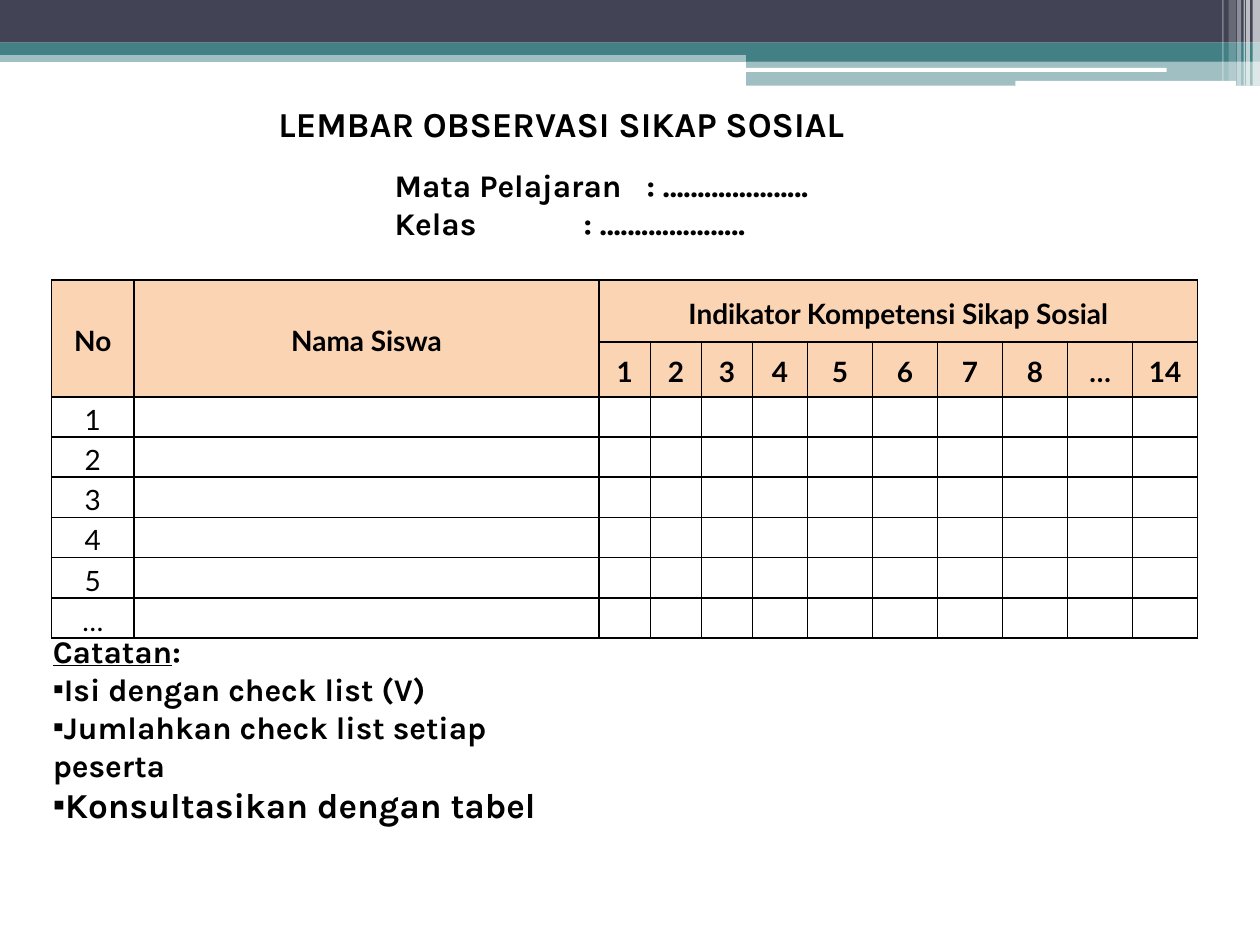
from lxml import etree
from pptx import Presentation
from pptx import util as u
from pptx.dml.color import RGBColor
from pptx.enum import shapes, text
from pptx.oxml.ns import qn

COLORS = {"navy": "424456", "teal": "438086", "white": "FFFFFF",
          "black": "000000", "peach": "FBD4B4"}

# left, top, width, height (cm), colour, opacity %, rounded
BANDS = [
    (0, 1.02, 25.4, 0.23, "teal", 50, False),
    (0, 0, 25.4, 0.86, "navy", 100, False),
    (0, 0.86, 25.4, 0.25, "teal", 100, False),
    (15.04, 0.99, 10.36, 0.25, "teal", 100, False),
    (15.04, 1.22, 10.36, 0.51, "teal", 50, False),
    (15.01, 1.37, 8.51, 0.08, "white", 100, True),
    (20.47, 1.63, 4.45, 0.1, "white", 100, True),
]
# left, width, height (cm), opacity %
STRIPES = [(25.25, 0.15, 1.73, 65), (25.12, 0.08, 1.73, 65),
           (25.07, 0.03, 1.73, 60), (24.94, 0.08, 1.73, 40),
           (24.77, 0.15, 1.63, 20), (24.64, 0.03, 1.63, 30)]

HEADING = "LEMBAR OBSERVASI SIKAP SOSIAL"
FIELDS = ["Mata Pelajaran\t: …………………", "Kelas\t\t: …………………"]
FIELD_INDENT, FIELD_TABS = 2.54, (5.08, 7.62)

HEADERS = ["No", "Nama Siswa", "Indikator Kompetensi Sikap Sosial"]
INDICATORS = ["1", "2", "3", "4", "5", "6", "7", "8", "…", "14"]
STUDENTS = ["1", "2", "3", "4", "5", "…"]
COL_WIDTHS = [1.66, 9.38] + [1.03] * 3 + [1.11] + [1.31] * 6
ROW_HEIGHTS = [1.25, 1.11] + [0.81] * len(STUDENTS)

NOTES_TITLE = ("Catatan", ":")
NOTES = [("Isi dengan check list (V)", 18),
         ("Jumlahkan check list setiap peserta", 18),
         ("Konsultasikan dengan tabel", 20)]


def rgb(name):
    return RGBColor.from_string(COLORS[name])


def add_band(s, left, top, width, height, color, opacity, rounded=False):
    kind = shapes.MSO_SHAPE.ROUNDED_RECTANGLE if rounded else shapes.MSO_SHAPE.RECTANGLE
    sp = s.shapes.add_shape(kind, u.Cm(left), u.Cm(top), u.Cm(width), u.Cm(height))
    sp.shadow.inherit = False
    sp.line.fill.background()
    sp.fill.solid()
    sp.fill.fore_color.rgb = rgb(color)
    if opacity < 100:
        clr = sp.fill._xPr.find(qn("a:solidFill"))[0]
        etree.SubElement(clr, qn("a:alpha"), val=str(opacity * 1000))


def style(p, size, font="Karla", bold=True):
    for r in p.runs:
        r.font.name, r.font.size, r.font.bold = font, u.Pt(size), bold
        r.font.color.rgb = rgb("black")


def place(sp, left, top, width, height):
    sp.left, sp.top, sp.width, sp.height = map(u.Cm, (left, top, width, height))
    tf = sp.text_frame
    tf.word_wrap = True
    tf.auto_size = text.MSO_AUTO_SIZE.NONE
    tf.vertical_anchor = text.MSO_ANCHOR.MIDDLE
    return tf


def set_indent(p, left=0):
    pPr = p._p.get_or_add_pPr()
    pPr.set("marL", str(u.Cm(left)))
    pPr.set("indent", "0")
    return pPr


def fill_title(tf):
    tf.text = HEADING
    tf.paragraphs[0].alignment = text.PP_ALIGN.CENTER
    style(tf.paragraphs[0], 20)
    for i, field in enumerate(FIELDS):
        p = tf.add_paragraph()
        p.text = field
        p.alignment = text.PP_ALIGN.LEFT
        p.space_before = u.Pt(0 if i else 12)
        tabs = etree.SubElement(set_indent(p, FIELD_INDENT), qn("a:tabLst"))
        for pos in FIELD_TABS:
            etree.SubElement(tabs, qn("a:tab"), pos=str(u.Cm(pos)), algn="l")
        style(p, 18)


def fill_notes(tf):
    p = tf.paragraphs[0]
    for part in NOTES_TITLE:
        p.add_run().text = part
    p.space_before = u.Pt(0)
    etree.SubElement(set_indent(p), qn("a:buNone"))
    style(p, 18)
    p.runs[0].font.underline = True
    for note, size in NOTES:
        p = tf.add_paragraph()
        p.text = note
        p.space_before = u.Pt(0)
        etree.SubElement(set_indent(p), qn("a:buChar"), char="▪")
        style(p, size)


def add_borders(cell):
    tcPr = cell._tc.get_or_add_tcPr()
    for i, side in enumerate(("a:lnL", "a:lnR", "a:lnT", "a:lnB")):
        ln = etree.Element(qn(side), w=str(u.Pt(1)))
        fill = etree.SubElement(ln, qn("a:solidFill"))
        etree.SubElement(fill, qn("a:srgbClr"), val=COLORS["black"])
        tcPr.insert(i, ln)


def write_cell(cell, value, bold):
    cell.text = value
    p = cell.text_frame.paragraphs[0]
    p.alignment = text.PP_ALIGN.CENTER
    p.line_spacing = 1.15
    style(p, 16, "Lato", bold)


def add_observation_table(s):
    n_rows, n_cols = len(ROW_HEIGHTS), len(COL_WIDTHS)
    table = s.shapes.add_table(n_rows, n_cols, u.Cm(1.04), u.Cm(5.64),
                               u.Cm(sum(COL_WIDTHS)), u.Cm(sum(ROW_HEIGHTS))).table
    for col, width in zip(table.columns, COL_WIDTHS):
        col.width = u.Cm(width)
    for row, height in zip(table.rows, ROW_HEIGHTS):
        row.height = u.Cm(height)
    for r in range(n_rows):
        for c in range(n_cols):
            cell = table.cell(r, c)
            cell.margin_left = cell.margin_right = u.Cm(0.18)
            cell.margin_top = cell.margin_bottom = 0
            cell.vertical_anchor = text.MSO_ANCHOR.MIDDLE
            if r < 2:
                cell.fill.solid()
                cell.fill.fore_color.rgb = rgb("peach")
            else:
                cell.fill.background()
            add_borders(cell)
    for c in (0, 1):
        table.cell(0, c).merge(table.cell(1, c))
    table.cell(0, 2).merge(table.cell(0, n_cols - 1))
    for c, header in enumerate(HEADERS):
        write_cell(table.cell(0, c), header, True)
    for c, indicator in enumerate(INDICATORS, 2):
        write_cell(table.cell(1, c), indicator, True)
    for r, number in enumerate(STUDENTS, 2):
        write_cell(table.cell(r, 0), number, False)


def main():
    prs = Presentation()
    prs.slide_width, prs.slide_height = u.Cm(25.4), u.Cm(19.05)
    s = prs.slides.add_slide(prs.slide_layouts[1])
    for band in BANDS:
        add_band(s, *band)
    for left, width, height, opacity in STRIPES:
        add_band(s, left, 0, width, height, "white", opacity)
    add_observation_table(s)
    fill_title(place(s.shapes.title, 5.16, 1.88, 12.32, 3.18))
    fill_notes(place(s.placeholders[1], 0.81, 12.98, 10.92, 3.43))
    prs.save("out.pptx")


if __name__ == "__main__":
    main()
